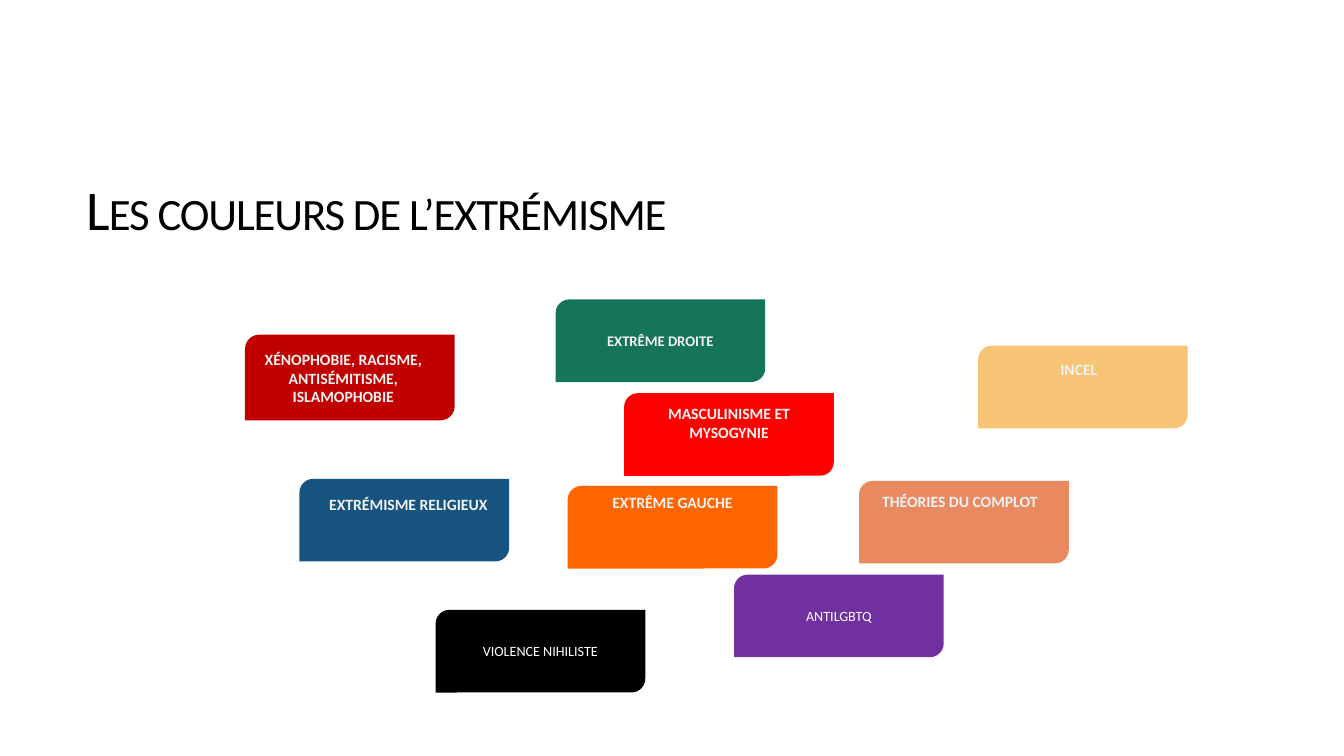
import pptx
import pptx.dml.color
import pptx.enum.shapes
import pptx.enum.text
import pptx.util

Inches, Pt = pptx.util.Inches, pptx.util.Pt
RGBColor = pptx.dml.color.RGBColor
ALIGN = pptx.enum.text.PP_ALIGN
ANCHOR = pptx.enum.text.MSO_ANCHOR

BLACK = RGBColor(0x00, 0x00, 0x00)
WHITE = RGBColor(0xFF, 0xFF, 0xFF)
PALE = RGBColor(0xF2, 0xF2, 0xF2)
CRIMSON = RGBColor(0xC0, 0x00, 0x00)
RED = RGBColor(0xFF, 0x00, 0x00)
ORANGE = RGBColor(0xFF, 0x66, 0x00)
BLUE = RGBColor(0x16, 0x53, 0x7F)
SALMON = RGBColor(0xE9, 0x89, 0x60)
YELLOW = RGBColor(0xF7, 0xC4, 0x75)
GREEN = RGBColor(0x16, 0x74, 0x5A)
PURPLE = RGBColor(0x70, 0x30, 0xA0)

FONT = "Calibri"
CARD_WIDTH, CARD_HEIGHT = 2.08, 0.82

# text, left, top, card height, fill, label box relative to the card
LABELLED_CARDS = [
    ("XÉNOPHOBIE, RACISME, ANTISÉMITISME, ISLAMOPHOBIE", 2.43, 3.32, 0.85, CRIMSON,
     (0.06, 0.1, 1.83, 0.67)),
    ("MASCULINISME ET MYSOGYNIE", 6.19, 3.9, CARD_HEIGHT, RED, (0, 0.06, CARD_WIDTH, 0.48)),
    ("EXTRÊME GAUCHE", 5.63, 4.82, CARD_HEIGHT, ORANGE, (0, 0.02, CARD_WIDTH, 0.29)),
    ("EXTRÉMISME RELIGIEUX", 2.97, 4.75, CARD_HEIGHT, BLUE, (0.04, 0.11, CARD_WIDTH, 0.29)),
    ("THÉORIES DU COMPLOT", 8.52, 4.77, CARD_HEIGHT, SALMON, (-0.04, 0.06, CARD_WIDTH, 0.29)),
    ("INCEL", 9.7, 3.43, CARD_HEIGHT, YELLOW, (-0.04, 0.09, CARD_WIDTH, 0.29)),
]

# text, left, top, fill, size, colour, bold
CENTRED_CARDS = [
    ("VIOLENCE NIHILISTE", 4.32, 6.05, BLACK, 10.1, WHITE, False),
    ("EXTRÊME DROITE", 5.51, 2.97, GREEN, 10.5, PALE, True),
    ("ANTILGBTQ", 7.28, 5.7, PURPLE, 10.1, WHITE, False),
]


def write(box, text, size, colour, bold=False, align=ALIGN.CENTER, anchor=ANCHOR.TOP):
    """Write one styled paragraph into a shape and return it."""
    frame = box.text_frame
    frame.word_wrap = True
    frame.vertical_anchor = anchor
    para = frame.paragraphs[0]
    para.text = text
    para.alignment = align
    para.font.name, para.font.size, para.font.bold = FONT, Pt(size), bold
    para.font.color.rgb = colour
    return para


def add_title(page, text, left, top, width, height):
    """Place the title in small capitals with tightened letters."""
    box = page.shapes.add_textbox(*map(Inches, (left, top, width, height)))
    para = write(box, text, 40, BLACK, align=ALIGN.LEFT, anchor=ANCHOR.MIDDLE)
    para.line_spacing = 0.9
    properties = para.runs[0]._r.get_or_add_rPr()
    properties.set("cap", "small")
    properties.set("spc", "-80")


def add_card(page, left, top, height, fill):
    """Place a coloured card with two opposite rounded corners."""
    card = page.shapes.add_shape(
        pptx.enum.shapes.MSO_SHAPE.ROUND_2_DIAG_RECTANGLE,
        *map(Inches, (left, top, CARD_WIDTH, height)))
    card.shadow.inherit = False
    card.fill.solid()
    card.fill.fore_color.rgb = fill
    card.line.fill.background()
    return card


def add_labelled_card(page, text, left, top, height, fill, label):
    """Place a card and its label, whose box is relative to the card."""
    add_card(page, left, top, height, fill)
    shift_x, shift_y, label_width, label_height = label
    box = page.shapes.add_textbox(
        *map(Inches, (left + shift_x, top + shift_y, label_width, label_height)))
    write(box, text, 11.2, PALE, bold=True)


def add_centred_card(page, text, left, top, fill, size, colour, bold):
    """Place a card with its text in the middle."""
    card = add_card(page, left, top, CARD_HEIGHT, fill)
    write(card, text, size, colour, bold, anchor=ANCHOR.MIDDLE)


def main():
    """Build and save the slide."""
    deck = pptx.Presentation()
    deck.slide_width, deck.slide_height = Inches(13.33), Inches(7.5)
    page = deck.slides.add_slide(deck.slide_layouts[6])
    add_title(page, "Les couleurs de l’extrémisme", 0.76, 1.73, 10.39, 0.75)
    for card in LABELLED_CARDS:
        add_labelled_card(page, *card)
    for card in CENTRED_CARDS:
        add_centred_card(page, *card)
    deck.save("out.pptx")


if __name__ == "__main__":
    main()
